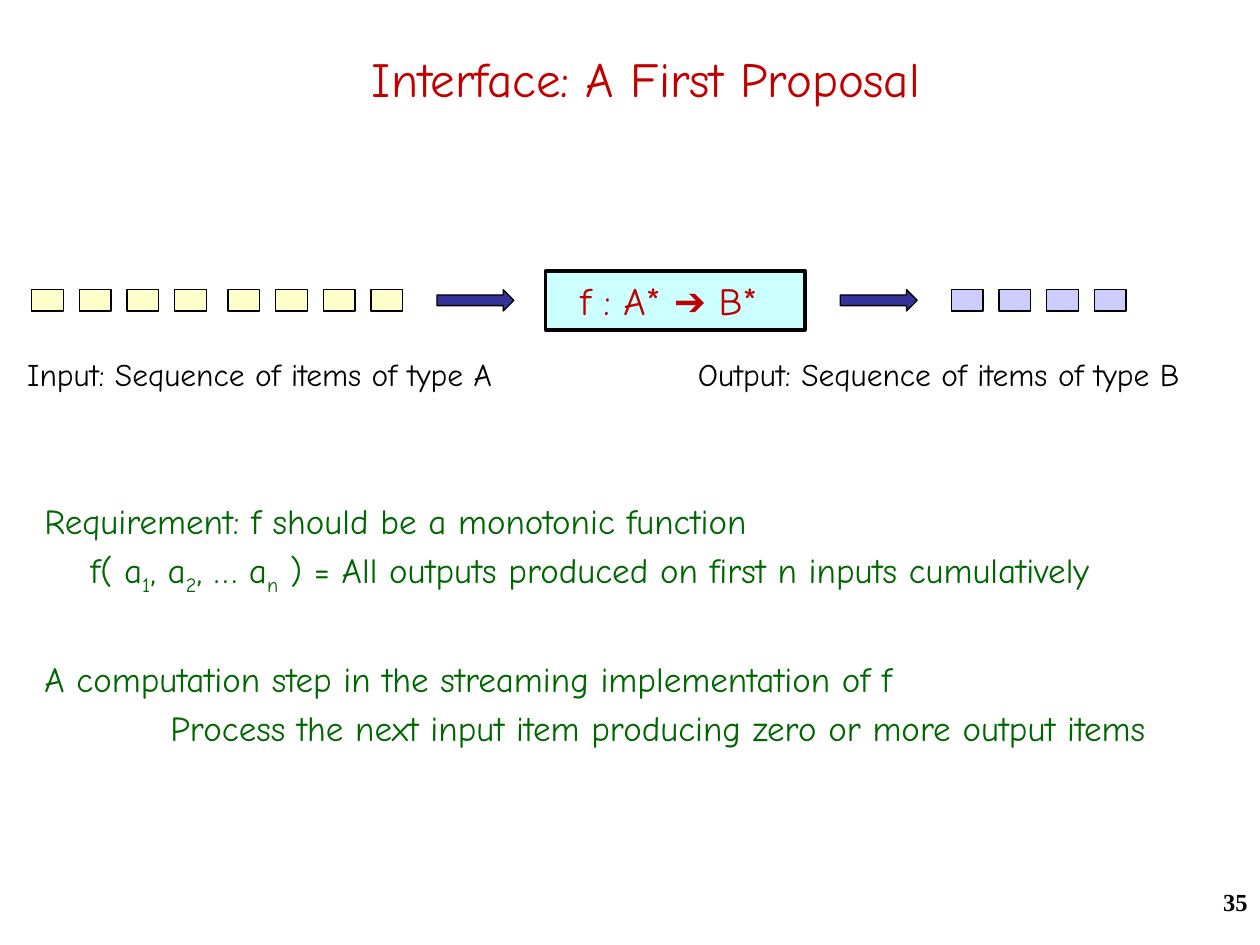
from pptx import Presentation
from pptx.dml.color import RGBColor as Rgb
from pptx.enum.shapes import MSO_SHAPE as Kind
from pptx.enum.text import MSO_ANCHOR as Anchor, MSO_AUTO_SIZE as Fit, PP_ALIGN as Align
from pptx.oxml.ns import qn
from pptx.util import Cm, Pt

HUES = {
    "red": "C00000", "green": "006600", "black": "000000", "cyan": "CCFFFF",
    "yellow": "FFFFCC", "lilac": "CCCCFF", "navy": "333399",
}
FONT = "Comic Neue"


def style(para, size, hue, face=FONT, bold=False):
    for run in para.runs:
        run.font.name = face
        run.font.size = Pt(size)
        run.font.bold = bold
        run.font.color.rgb = Rgb.from_string(HUES[hue])


def draw(kind, left, top, width, height, hue, line=0.75):
    shape = slide.shapes.add_shape(kind, Cm(left), Cm(top), Cm(width), Cm(height))
    shape.shadow.inherit = False
    shape.fill.solid()
    shape.fill.fore_color.rgb = Rgb.from_string(HUES[hue])
    shape.line.color.rgb = Rgb.from_string(HUES["black"])
    shape.line.width = Pt(line)
    return shape


deck = Presentation()
deck.slide_width, deck.slide_height = Cm(25.4), Cm(19.05)
slide = deck.slides.add_slide(deck.slide_layouts[1])

# Title
title = slide.shapes.title
title.left, title.top, title.width, title.height = Cm(0.64), Cm(0.84), Cm(24.76), Cm(1.47)
title.text_frame.text = "Interface: A First Proposal"
title.text_frame.auto_size = Fit.NONE
style(title.text_frame.paragraphs[0], 28, "red")

# Function box
func = draw(Kind.RECTANGLE, 11, 5.46, 5.23, 1.19, "cyan", 2)
func.text_frame.text = "f : A* ➔ B* "
func.text_frame.vertical_anchor = Anchor.TOP
func.text_frame.paragraphs[0].alignment = Align.CENTER
style(func.text_frame.paragraphs[0], 22, "red")

# Input and output items, in groups of four
for start, hue in ((0.64, "yellow"), (4.6, "yellow"), (19.18, "lilac")):
    for i in range(4):
        draw(Kind.RECTANGLE, start + i * 0.96, 5.84, 0.64, 0.43, hue)

# Flow arrows
for left in (8.81, 16.94):
    draw(Kind.RIGHT_ARROW, left, 5.84, 1.55, 0.43, "navy")

# Captions and page number
labels = [
    (0.3, 7.04, 11.13, 1.02, "Input: Sequence of items of type A", 18, FONT, False, Align.LEFT),
    (13.82, 7.04, 11.53, 1.02, "Output: Sequence of items of type B", 18, FONT, False, Align.LEFT),
    (20.12, 17.75, 5.28, 1.27, "35", 14, "Times New Roman", True, Align.RIGHT),
]
for left, top, width, height, text, size, face, bold, align in labels:
    box = slide.shapes.add_textbox(Cm(left), Cm(top), Cm(width), Cm(height))
    box.text_frame.word_wrap = align == Align.RIGHT
    para = box.text_frame.paragraphs[0]
    para.text = text
    para.alignment = align
    style(para, size, "black", face, bold)

# Requirement text: indent in cm, space before in points, runs (odd ones are subscripts)
lines = [
    (0, 0, ["Requirement: f should be a monotonic function"]),
    (0.93, 4, ["f( a", "1", ", a", "2", ", … a", "n",
               " ) = All outputs produced on first n inputs cumulatively"]),
    (0, 35, ["A computation step in the streaming implementation of f"]),
    (2.54, 4, ["Process the next input item producing zero or more output items"]),
]
body = slide.placeholders[1]
body.left, body.top, body.width, body.height = Cm(0.64), Cm(9.95), Cm(24.56), Cm(9.08)
frame = body.text_frame
frame.auto_size = Fit.NONE
for n, (indent, gap, parts) in enumerate(lines):
    para = frame.add_paragraph() if n else frame.paragraphs[0]
    props = para._p.get_or_add_pPr()
    props.set("marL", str(Cm(indent)))
    props.set("indent", "0")
    props.append(props.makeelement(qn("a:buNone"), {}))
    para.space_before = Pt(gap)
    for i, part in enumerate(parts):
        run = para.add_run()
        run.text = part
        if i % 2:
            run.font._element.set("baseline", "-25000")
    style(para, 20, "green")

deck.save("out.pptx")
